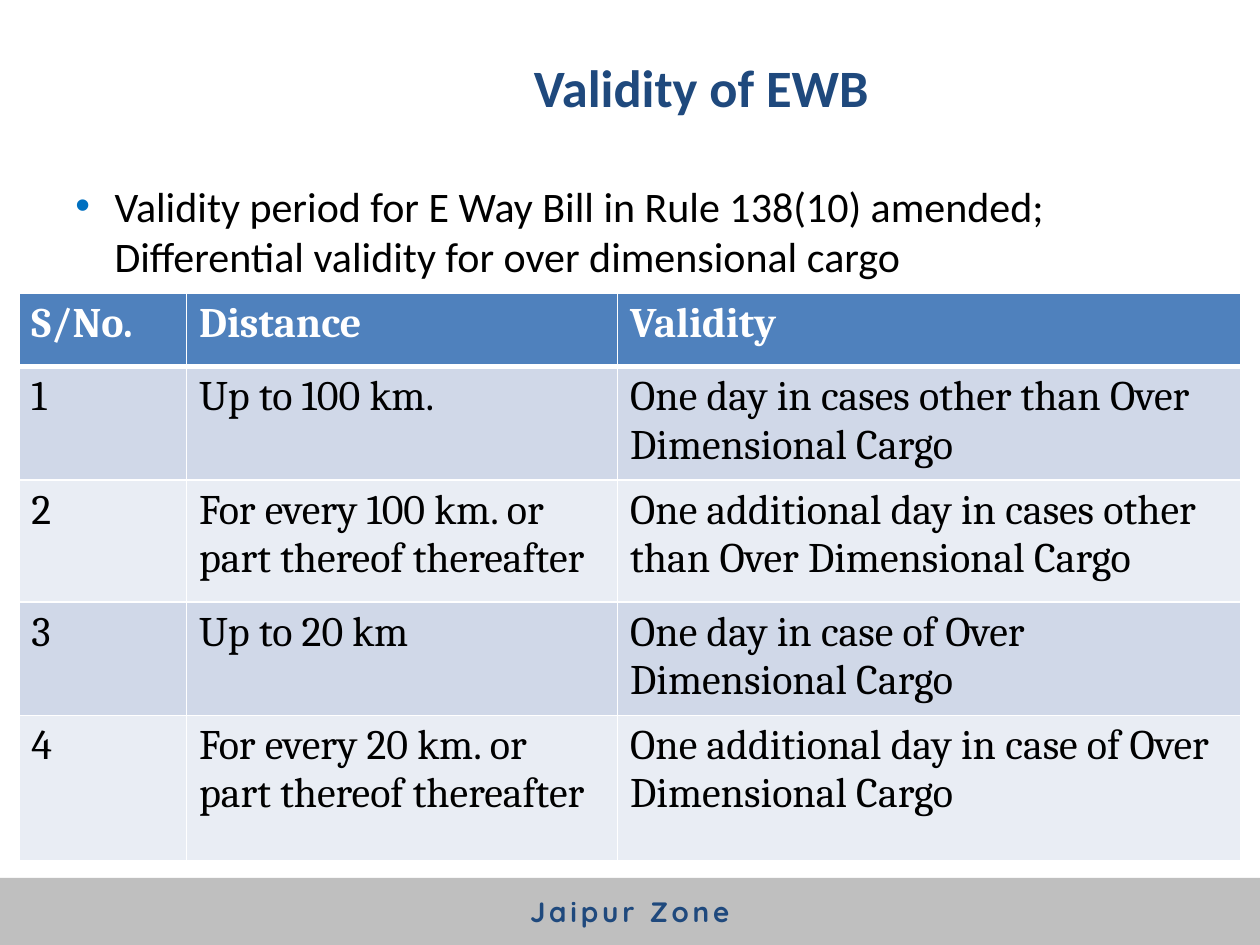
from lxml.etree import SubElement
from pptx import Presentation
from pptx.dml.color import RGBColor
from pptx.enum.shapes import MSO_SHAPE
from pptx.enum.text import MSO_ANCHOR, PP_ALIGN
from pptx.oxml.ns import qn
from pptx.util import Cm, Pt

NAVY = RGBColor(0x1F, 0x49, 0x7D)
BLUE = RGBColor(0x4F, 0x81, 0xBD)
BULLET = RGBColor(0x00, 0x70, 0xC0)
BAND_DARK = RGBColor(0xD0, 0xD8, 0xE8)
BAND_LIGHT = RGBColor(0xE9, 0xED, 0xF4)
GREY = RGBColor(0xBF, 0xBF, 0xBF)
WHITE = RGBColor(0xFF, 0xFF, 0xFF)
BLACK = RGBColor(0x00, 0x00, 0x00)


def add_run(p, text, size, font, color, bold=False):
    r = p.add_run()
    r.text = text
    r.font.size = Pt(size)
    r.font.name = font
    r.font.color.rgb = color
    r.font.bold = bold
    return r


def add_border(cell, side, width):
    """Draw a white line on one side (L, R, T or B); call before setting the fill."""
    ln = SubElement(cell._tc.get_or_add_tcPr(), qn(f"a:ln{side}"), w=str(Pt(width)))
    SubElement(SubElement(ln, qn("a:solidFill")), qn("a:srgbClr"), val=str(WHITE))


prs = Presentation()
prs.slide_width, prs.slide_height = Cm(25.4), Cm(19.05)
s = prs.slides.add_slide(prs.slide_layouts[5])

# Title
title = s.shapes.title
title.left, title.top, title.width, title.height = Cm(5.72), Cm(0.33), Cm(16.84), Cm(2.84)
tf = title.text_frame
tf.vertical_anchor = MSO_ANCHOR.MIDDLE
p = tf.paragraphs[0]
p.alignment = PP_ALIGN.CENTER
add_run(p, "Validity of EWB", 30, "Calibri", NAVY, bold=True)

# Bullet
body = s.shapes.add_textbox(Cm(1.27), Cm(3.51), Cm(22.86), Cm(13.51))
tf = body.text_frame
tf.word_wrap = True
p = tf.paragraphs[0]
pPr = p._p.get_or_add_pPr()
pPr.set("marL", str(Cm(0.79)))
pPr.set("indent", str(-Cm(0.79)))
SubElement(SubElement(pPr, qn("a:buClr")), qn("a:srgbClr"), val=str(BULLET))
SubElement(pPr, qn("a:buFont"), typeface="Arial")
SubElement(pPr, qn("a:buChar"), char="•")
add_run(p, "Validity period for E Way Bill in Rule 138(10) amended; "
           "Differential validity for over dimensional cargo", 24, "Calibri", BLACK)

# Footer band
footer = s.shapes.add_shape(MSO_SHAPE.RECTANGLE, 0, Cm(17.7), prs.slide_width, Cm(1.36))
footer.shadow.inherit = False
footer.fill.solid()
footer.fill.fore_color.rgb = GREY
footer.line.fill.background()
tf = footer.text_frame
tf.vertical_anchor = MSO_ANCHOR.MIDDLE
p = tf.paragraphs[0]
p.alignment = PP_ALIGN.CENTER
r = add_run(p, "Jaipur Zone", 16, "Quicksand", NAVY, bold=True)
r.font._element.set("spc", "220")

# Validity table
rows = [
    ("S/No.", "Distance", "Validity"),
    ("1", "Up to 100 km.", "One day in cases other than Over Dimensional Cargo"),
    ("2", "For every 100 km. or part thereof thereafter",
     "One additional day in cases other than Over Dimensional Cargo"),
    ("3", "Up to 20 km", "One day in case of Over Dimensional Cargo"),
    ("4", "For every 20 km. or part thereof thereafter",
     "One additional day in case of Over Dimensional Cargo"),
]
col_widths = [3.38, 8.69, 12.57]
row_heights = [1.47, 2.21, 2.46, 2.21, 2.92]
table = s.shapes.add_table(len(rows), len(col_widths), Cm(0.38), Cm(5.92),
                           Cm(sum(col_widths)), Cm(sum(row_heights))).table
for column, width in zip(table.columns, col_widths):
    column.width = Cm(width)
for i, (values, height) in enumerate(zip(rows, row_heights)):
    table.rows[i].height = Cm(height)
    header = i == 0
    fill = BLUE if header else BAND_DARK if i % 2 else BAND_LIGHT
    for j, value in enumerate(values):
        cell = table.cell(i, j)
        for side in "LR":
            add_border(cell, side, 1)
        add_border(cell, "T", 3 if i == 1 else 1)
        add_border(cell, "B", 3 if header else 1)
        cell.fill.solid()
        cell.fill.fore_color.rgb = fill
        add_run(cell.text_frame.paragraphs[0], value, 24, "Cambria",
                WHITE if header else BLACK, bold=header)

prs.save("out.pptx")
